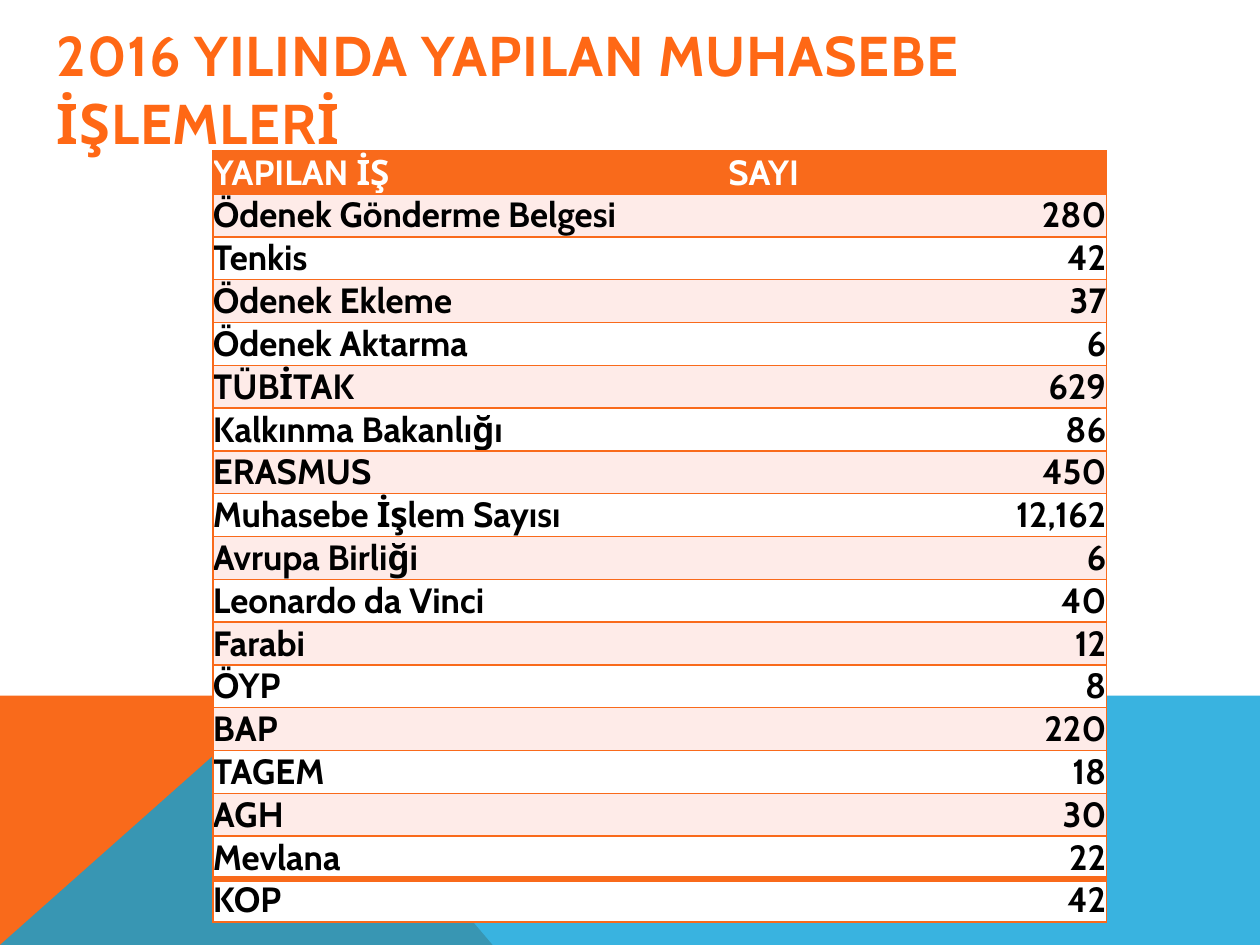
import dataclasses

import pptx
import pptx.dml.color
import pptx.enum.text
import pptx.oxml.ns
import pptx.util
from lxml import etree
from pptx.util import Inches


@dataclasses.dataclass(frozen=True)
class Theme:
    font: str = "Cabin"
    title_size: int = 32
    table_size: int = 20
    title: str = "FF6815"
    accent: str = "F96A1B"
    blue: str = "08A1D9"
    band: str = "FEEBE8"
    white: str = "FFFFFF"
    black: str = "000000"


THEME = Theme()
TITLE = "2016 YILINDA YAPILAN MUHASEBE İŞLEMLERİ"
HEADER = ("YAPILAN İŞ", "SAYI")
TRANSACTIONS = [
    ("Ödenek Gönderme Belgesi", "280"),
    ("Tenkis", "42"),
    ("Ödenek Ekleme", "37"),
    ("Ödenek Aktarma", "6"),
    ("TÜBİTAK", "629"),
    ("Kalkınma Bakanlığı", "86"),
    ("ERASMUS", "450"),
    ("Muhasebe İşlem Sayısı", "12,162"),
    ("Avrupa Birliği", "6"),
    ("Leonardo da Vinci", "40"),
    ("Farabi", "12"),
    ("ÖYP", "8"),
    ("BAP", "220"),
    ("TAGEM", "18"),
    ("AGH", "30"),
    ("Mevlana", "22"),
    ("KOP", "42"),
]


def rgb(color):
    return pptx.dml.color.RGBColor.from_string(color)


def add_child(parent, tag, **attributes):
    return etree.SubElement(parent, pptx.oxml.ns.qn(tag), attributes)


def format_text(p, size, color):
    for r in p.runs:
        r.font.name = THEME.font
        r.font.size = pptx.util.Pt(size)
        r.font.bold = True
        r.font.color.rgb = rgb(color)


def add_polygon(slide, points, color, opacity=100):
    builder = slide.shapes.build_freeform(*points[0], scale=1.0)
    builder.add_line_segments(points[1:], close=True)
    sp = builder.convert_to_shape()
    sp.shadow.inherit = False
    sp.line.fill.background()
    sp.fill.solid()
    sp.fill.fore_color.rgb = rgb(color)
    if opacity < 100:
        srgb = sp.fill._xPr.find(".//" + pptx.oxml.ns.qn("a:srgbClr"))
        add_child(srgb, "a:alpha", val=str(opacity * 1000))


def add_footer_art(slide, left, top, width, height):
    """Orange wedge under a translucent blue band."""
    right, bottom = left + width, top + height
    peak = (left + Inches(2.23), top)
    wedge = [(left, bottom), (left, top), peak, (left + Inches(3.91), bottom)]
    band = [(left, bottom), peak, (right, top), (right, bottom)]
    add_polygon(slide, wedge, THEME.accent)
    add_polygon(slide, band, THEME.blue, opacity=80)


def add_title(slide, left, top, width, height):
    title = slide.shapes.title
    title.left, title.top, title.width, title.height = left, top, width, height
    tf = title.text_frame
    tf.text = TITLE
    tf.word_wrap = True
    tf.auto_size = pptx.enum.text.MSO_AUTO_SIZE.NONE
    tf.vertical_anchor = pptx.enum.text.MSO_ANCHOR.MIDDLE
    p = tf.paragraphs[0]
    p.alignment = pptx.enum.text.PP_ALIGN.LEFT
    format_text(p, THEME.title_size, THEME.title)
    p.runs[0].font._element.set("spc", "50")


def set_borders(cell, widths):
    """Widths in points for left, right, top and bottom; 0 hides a side."""
    tc_pr = cell._tc.get_or_add_tcPr()
    for index, (side, width) in enumerate(zip("LRTB", widths)):
        line = etree.Element(pptx.oxml.ns.qn(f"a:ln{side}"), w=str(pptx.util.Pt(width)))
        if width:
            add_child(add_child(line, "a:solidFill"), "a:srgbClr", val=THEME.accent)
        else:
            add_child(line, "a:noFill")
        tc_pr.insert(index, line)


def format_cell(cell, text, fill, color, align, borders):
    cell.margin_left = cell.margin_right = cell.margin_top = cell.margin_bottom = 0
    cell.vertical_anchor = pptx.enum.text.MSO_ANCHOR.BOTTOM
    cell.fill.solid()
    cell.fill.fore_color.rgb = rgb(fill)
    p = cell.text_frame.paragraphs[0]
    p.text = text
    p.alignment = align
    format_text(p, THEME.table_size, color)
    set_borders(cell, borders)


def add_transactions(slide, left, top, width, row_height):
    rows = [HEADER] + TRANSACTIONS
    last = len(rows) - 1
    table = slide.shapes.add_table(
        len(rows), 2, left, top, width, row_height * len(rows)).table
    table.columns[0].width = Inches(4.09)
    table.columns[1].width = width - Inches(4.09)
    align = pptx.enum.text.PP_ALIGN
    for i, values in enumerate(rows):
        table.rows[i].height = row_height
        if i == 0:
            fill, color = THEME.accent, THEME.white
        else:
            # Odd rows are tinted, apart from the closing row
            fill = THEME.band if i % 2 and i < last else THEME.white
            color = THEME.black
        # A heavy rule sets off the closing row
        above = 4 if i == last else 1
        below = 4 if i == last - 1 else 1
        for j, text in enumerate(values):
            side = align.RIGHT if i and j else align.LEFT
            format_cell(table.cell(i, j), text, fill, color, side,
                        (1 - j, j, above, below))


def main():
    prs = pptx.Presentation()
    prs.slide_width, prs.slide_height = Inches(10), Inches(7.5)
    slide = prs.slides.add_slide(prs.slide_layouts[5])
    add_footer_art(slide, 0, Inches(5.52), Inches(10), Inches(1.98))
    add_title(slide, Inches(0.35), Inches(0.4), Inches(9.37), Inches(0.6))
    add_transactions(slide, Inches(1.69), Inches(1.2), Inches(7.09), Inches(0.34))
    prs.save("out.pptx")


if __name__ == "__main__":
    main()
